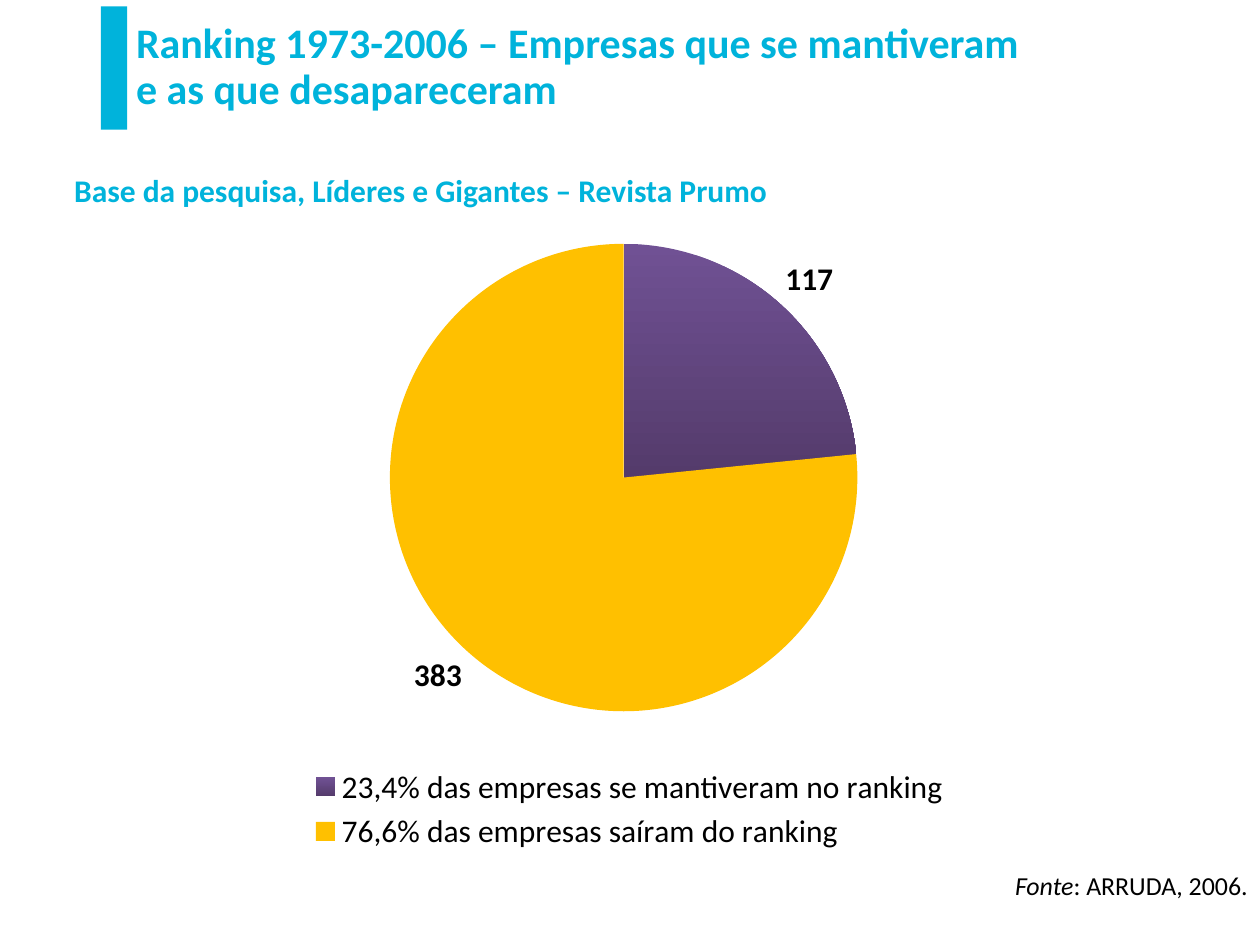
from dataclasses import dataclass

from pptx import Presentation
from pptx.chart.data import CategoryChartData
from pptx.dml.color import RGBColor
from pptx.enum.chart import XL_CHART_TYPE, XL_LABEL_POSITION, XL_LEGEND_POSITION
from pptx.enum.shapes import MSO_SHAPE
from pptx.enum.text import MSO_ANCHOR, MSO_AUTO_SIZE, PP_ALIGN
from pptx.oxml import parse_xml
from pptx.util import Inches, Pt

TITLE_ONLY = 5
COLUMNS, ROWS = 100, 75
CHART_NAMESPACE = "http://schemas.openxmlformats.org/drawingml/2006/chart"


@dataclass(frozen=True)
class Theme:
    font: str = "Calibri"
    accent: RGBColor = RGBColor(0x00, 0xB3, 0xDB)
    text: RGBColor = RGBColor(0x00, 0x00, 0x00)
    stayed_top: RGBColor = RGBColor(0x70, 0x51, 0x94)
    stayed_bottom: RGBColor = RGBColor(0x54, 0x3B, 0x6B)
    left_ranking: RGBColor = RGBColor(0xFF, 0xC0, 0x00)
    title_size: float = 24
    body_size: float = 18
    source_size: float = 14.8


class SlideBuilder:
    """Places styled elements on a slide by grid columns and rows."""

    def __init__(self, presentation, theme):
        self.theme = theme
        self.column = presentation.slide_width / COLUMNS
        self.row = presentation.slide_height / ROWS
        self.slide = presentation.slides.add_slide(presentation.slide_layouts[TITLE_ONLY])

    def box(self, left, top, width, height):
        return (int(left * self.column), int(top * self.row),
                int(width * self.column), int(height * self.row))

    def style(self, font, size, color, bold=False):
        font.name = self.theme.font
        font.size = Pt(size)
        font.color.rgb = color
        font.bold = bold

    def title(self, text, *area):
        shape = self.slide.shapes.title
        shape.left, shape.top, shape.width, shape.height = self.box(*area)
        frame = shape.text_frame
        frame.text = text
        frame.word_wrap = True
        frame.auto_size = MSO_AUTO_SIZE.NONE
        frame.vertical_anchor = MSO_ANCHOR.MIDDLE
        paragraph = frame.paragraphs[0]
        paragraph.alignment = PP_ALIGN.LEFT
        paragraph.line_spacing = 0.9
        self.style(paragraph.font, self.theme.title_size, self.theme.accent, bold=True)

    def bar(self, *area):
        shape = self.slide.shapes.add_shape(MSO_SHAPE.RECTANGLE, *self.box(*area))
        shape.shadow.inherit = False
        shape.fill.solid()
        shape.fill.fore_color.rgb = self.theme.accent
        shape.line.fill.background()

    def text(self, runs, size, color, *area, bold=False, alignment=PP_ALIGN.LEFT):
        """Add one paragraph; runs are (text, italic) pairs."""
        frame = self.slide.shapes.add_textbox(*self.box(*area)).text_frame
        frame.word_wrap = True
        paragraph = frame.paragraphs[0]
        paragraph.alignment = alignment
        self.style(paragraph.font, size, color, bold)
        for content, italic in runs:
            run = paragraph.add_run()
            run.text = content
            run.font.italic = italic

    def pie(self, values, plot_area, *area):
        theme = self.theme
        data = CategoryChartData()
        data.categories = list(values)
        data.add_series("Empresas", list(values.values()))
        chart = self.slide.shapes.add_chart(XL_CHART_TYPE.PIE, *self.box(*area), data).chart
        chart.has_title = False
        self.style(chart.font, theme.body_size, theme.text)

        chart.has_legend = True
        chart.legend.position = XL_LEGEND_POSITION.BOTTOM
        chart.legend.include_in_layout = False
        self.style(chart.legend.font, theme.body_size, theme.text)

        # Slice colours
        plot = chart.plots[0]
        plot.vary_by_categories = True
        points = plot.series[0].points
        stayed = points[0].format.fill
        stayed.gradient()
        stayed.gradient_angle = 270
        for stop, color in zip(stayed.gradient_stops, (theme.stayed_top, theme.stayed_bottom)):
            stop.color.rgb = color
        gone = points[1].format.fill
        gone.solid()
        gone.fore_color.rgb = theme.left_ranking

        # Value labels
        labels = plot.series[0].data_labels
        labels.show_value = True
        labels.show_percentage = False
        labels.position = XL_LABEL_POSITION.OUTSIDE_END
        self.style(labels.font, theme.body_size, theme.text, bold=True)

        # Fixed inner plot area, as shares of the chart
        sizes = "".join(f'<c:{key} val="{share}"/>' for key, share in zip("xywh", plot_area))
        layout = parse_xml(
            f'<c:layout xmlns:c="{CHART_NAMESPACE}"><c:manualLayout>'
            '<c:layoutTarget val="inner"/><c:xMode val="edge"/><c:yMode val="edge"/>'
            f'{sizes}</c:manualLayout></c:layout>')
        area_element = chart.element.chart.plotArea
        for previous in area_element.findall(f"{{{CHART_NAMESPACE}}}layout"):
            area_element.remove(previous)
        area_element.insert(0, layout)


def main():
    presentation = Presentation()
    presentation.slide_width, presentation.slide_height = Inches(10), Inches(7.5)
    theme = Theme()
    builder = SlideBuilder(presentation, theme)

    # Heading
    builder.title("Ranking 1973-2006 – Empresas que se mantiveram\ve as que desapareceram",
                  9.8, 0.5, 74.9, 9.8)
    builder.bar(8, 0.5, 2.1, 9.8)
    builder.text([("Base da pesquisa, Líderes e Gigantes – Revista Prumo", False)],
                 theme.body_size, theme.accent, 4.9, 13.1, 68.1, 4, bold=True)

    # Companies that stayed and left
    builder.pie({"23,4% das empresas se mantiveram no ranking": 117,
                 "76,6% das empresas saíram do ranking": 383},
                (0.29, 0.04, 0.41, 0.74), 4.7, 17, 90.5, 51)

    # Source
    builder.text([("Fonte", True), (": ARRUDA, 2006.", False)], theme.source_size, theme.text,
                 55.8, 68.5, 44.2, 3.3, alignment=PP_ALIGN.RIGHT)

    presentation.save("out.pptx")


if __name__ == "__main__":
    main()
